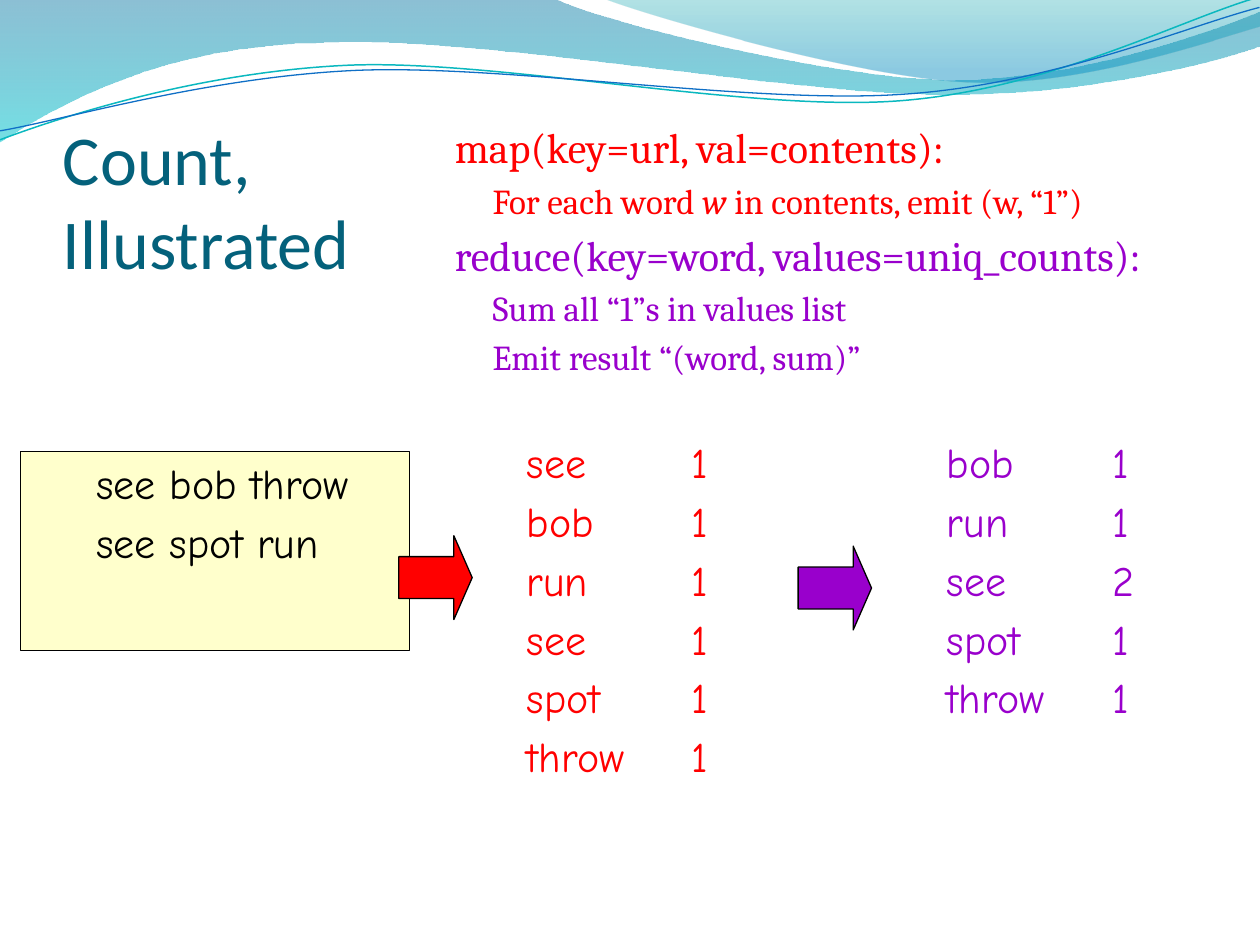
from lxml import etree
from pptx import Presentation
from pptx import util as u
from pptx.dml.color import RGBColor
from pptx.enum import shapes, text
from pptx.oxml.ns import qn

Cm, Pt = u.Cm, u.Pt

THEME = {
    "title": "04617B", "map": "FF0000", "reduce": "9900CC",
    "note": "FFFFCC", "ink": "000000",
    "title_font": "Calibri", "body_font": "Cambria", "data_font": "Comic Neue",
    "title_size": 40, "main_size": 24, "sub_size": 20,
}


def add_outline(s, segments, close):
    """Outline in cm: a start point, then lines (1 point) and Bezier curves (3 points)."""
    points = [(round(x * 100), round(y * 100)) for seg in segments for x, y in seg]
    fb = s.shapes.build_freeform(*points[0], scale=Cm(0.01))
    fb.add_line_segments(points[1:], close=close)
    sp = fb.convert_to_shape()
    sp.shadow.inherit = False
    nodes = iter(list(sp._element.iter(qn("a:lnTo"))))
    for seg in segments[1:]:
        group = [next(nodes) for _ in seg]
        if len(group) == 3:
            curve = etree.Element(qn("a:cubicBezTo"))
            group[0].addprevious(curve)
            for node in group:
                curve.append(node[0])
                node.getparent().remove(node)
    return sp


def write_lines(tf, lines, font, left, hang):
    """Fill a frame with (text, size, colour, extra indent) lines, hanging indent in cm."""
    tf.word_wrap = True
    tf.vertical_anchor = text.MSO_ANCHOR.TOP
    tf.text = "\n".join(line[0] for line in lines)
    for p, (_, size, colour, extra) in zip(tf.paragraphs, lines):
        p.alignment = text.PP_ALIGN.LEFT
        pPr = p._p.get_or_add_pPr()
        pPr.set("marL", str(Cm(left + extra)))
        pPr.set("indent", str(-Cm(hang)))
        pPr.set("defTabSz", str(Cm(2.54)))
        before = etree.SubElement(pPr, qn("a:spcBef"))
        etree.SubElement(before, qn("a:spcPct")).set("val", "20000")
        for r in p.runs:
            r.font.name, r.font.size = font, Pt(size)
            r.font.color.rgb = RGBColor.from_string(colour)


prs = Presentation()
prs.slide_width, prs.slide_height = Cm(25.4), Cm(19.05)
s = prs.slides.add_slide(prs.slide_layouts[6])

# Header waves: outline, then gradient stops as (position, colour, opacity %)
waves = [
    ([[(0, -0.03)], [(11.18, -0.03)],
      [(12.09, 0.43), (16.87, 1.6), (19.25, 1.6)],
      [(21.67, 1.6), (24.33, 0.66), (25.4, 0.23)], [(25.43, 0.91)],
      [(24.97, 1.12), (22.1, 1.93), (18.95, 1.9)],
      [(15.8, 1.9), (9.7, 0.71), (6.53, 0.86)],
      [(3.28, 0.89), (1.17, 2.11), (-0.03, 2.87)]],
     [(0, "0074A1", 45), (1, "00C6CF", 55)]),
    ([[(12.17, -0.03)],
      [(12.93, 0.28), (17.32, 1.57), (19.53, 1.65)],
      [(21.74, 1.75), (24.41, 0.81), (25.4, 0.53)], [(25.4, 0)]],
     [(0, "00A1A9", 30), (0.8, "008BBF", 45)]),
]
for outline, stops in waves:
    sp = add_outline(s, outline, True)
    sp.line.fill.background()
    sp.fill.gradient()
    sp.fill.gradient_angle = 270
    for stop, (pos, colour, _) in zip(sp.fill.gradient_stops, stops):
        stop.position = pos
        stop.color.rgb = RGBColor.from_string(colour)
    for clr, (_, _, opacity) in zip(sp._element.spPr.iter(qn("a:srgbClr")), stops):
        etree.SubElement(clr, qn("a:alpha")).set("val", str(opacity * 1000))

# Thin curves over the waves, slightly tilted
curves = [
    ([[(-0.05, 2.22)],
      [(1.19, 1.82), (4.01, 1.04), (7.05, 1.05)],
      [(10.05, 1.07), (15.02, 2.37), (18.07, 2.29)],
      [(21.13, 2.21), (23.86, 0.91), (25.4, 0.55)]], "0AB8BF", 0.85),
    ([[(-0.05, 2.04)],
      [(1.17, 1.9), (4.17, 1.15), (7.2, 1.16)],
      [(10.25, 1.18), (15.14, 2.23), (18.19, 2.16)],
      [(21.22, 2.1), (23.94, 1.06), (25.44, 0.75)]], "0F6FC6", 0.75),
]
for outline, colour, width in curves:
    sp = add_outline(s, outline, False)
    sp.rotation = 357.3
    sp.fill.background()
    sp.line.color.rgb = RGBColor.from_string(colour)
    sp.line.width = Pt(width)

# Pseudocode
main, sub = THEME["main_size"], THEME["sub_size"]
code = [
    ("map(key=url, val=contents):", main, THEME["map"], 0),
    ("For each word ", sub, THEME["map"], 0.76),
    ("reduce(key=word, values=uniq_counts):", main, THEME["reduce"], 0),
    ("Sum all “1”s in values list", sub, THEME["reduce"], 0.76),
    ("Emit result “(word, sum)”", sub, THEME["reduce"], 0.76),
]
sp = s.shapes.add_textbox(Cm(7.83), Cm(2.33), Cm(17.57), Cm(5.72))
write_lines(sp.text_frame, code, THEME["body_font"], 1.78, 0.69)
p = sp.text_frame.paragraphs[1]
for words, italic in (("w", True), (" in contents, emit (w, “1”)", False)):
    r = p.add_run()
    r.text = words
    r.font.name, r.font.size, r.font.italic = THEME["body_font"], Pt(sub), italic
    r.font.color.rgb = RGBColor.from_string(THEME["map"])

# Title
sp = s.shapes.add_textbox(Cm(1.27), Cm(1.9), Cm(21.59), Cm(3.81))
tf = sp.text_frame
tf.word_wrap = True
tf.vertical_anchor = text.MSO_ANCHOR.BOTTOM
tf.margin_left = tf.margin_right = tf.margin_bottom = 0
tf.text = "Count, \vIllustrated"
for r in tf.paragraphs[0].runs:
    r.font.name, r.font.size = THEME["title_font"], Pt(THEME["title_size"])
    r.font.color.rgb = RGBColor.from_string(THEME["title"])

# Input document
sp = s.shapes.add_shape(shapes.MSO_SHAPE.RECTANGLE, Cm(0.42), Cm(9.1), Cm(7.83), Cm(4.02))
sp.shadow.inherit = False
sp.fill.solid()
sp.fill.fore_color.rgb = RGBColor.from_string(THEME["note"])
sp.line.color.rgb = RGBColor.from_string(THEME["ink"])
sp.line.width = Pt(0.75)
lines = [(t, main, THEME["ink"], 0) for t in ("see bob throw", "see spot run")]
write_lines(sp.text_frame, lines, THEME["data_font"], 2.06, 0.79)

# Emitted pairs and summed counts
columns = [
    (9.1, "map", ["see\t1", "bob\t1", "run\t1", "see \t1", "spot \t1", "throw\t1"]),
    (17.57, "reduce", ["bob\t1", "run\t1", "see \t2", "spot \t1", "throw\t1"]),
]
for x, step, pairs in columns:
    sp = s.shapes.add_textbox(Cm(x), Cm(8.68), Cm(7.83), Cm(4.02))
    lines = [(t, main, THEME[step], 0) for t in pairs]
    write_lines(sp.text_frame, lines, THEME["data_font"], 2.06, 0.79)

# Step arrows
for x, y, step in ((8.04, 10.8, "map"), (16.09, 11.01, "reduce")):
    sp = s.shapes.add_shape(shapes.MSO_SHAPE.RIGHT_ARROW, Cm(x), Cm(y), Cm(1.48), Cm(1.69))
    sp.adjustments[0], sp.adjustments[1] = 0.5, 0.25
    sp.shadow.inherit = False
    sp.fill.solid()
    sp.fill.fore_color.rgb = RGBColor.from_string(THEME[step])
    sp.line.color.rgb = RGBColor.from_string(THEME["ink"])
    sp.line.width = Pt(0.75)

prs.save("out.pptx")
